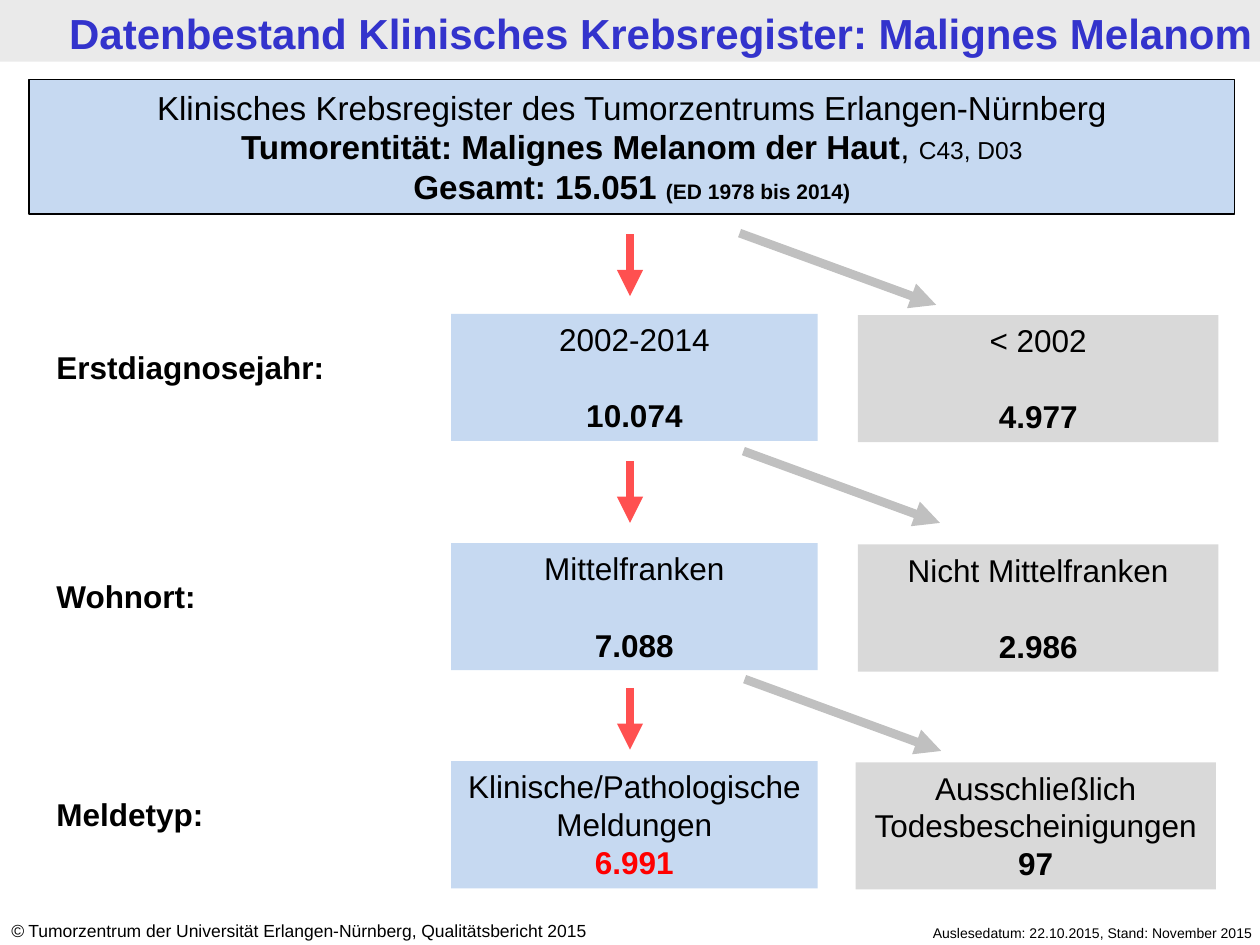
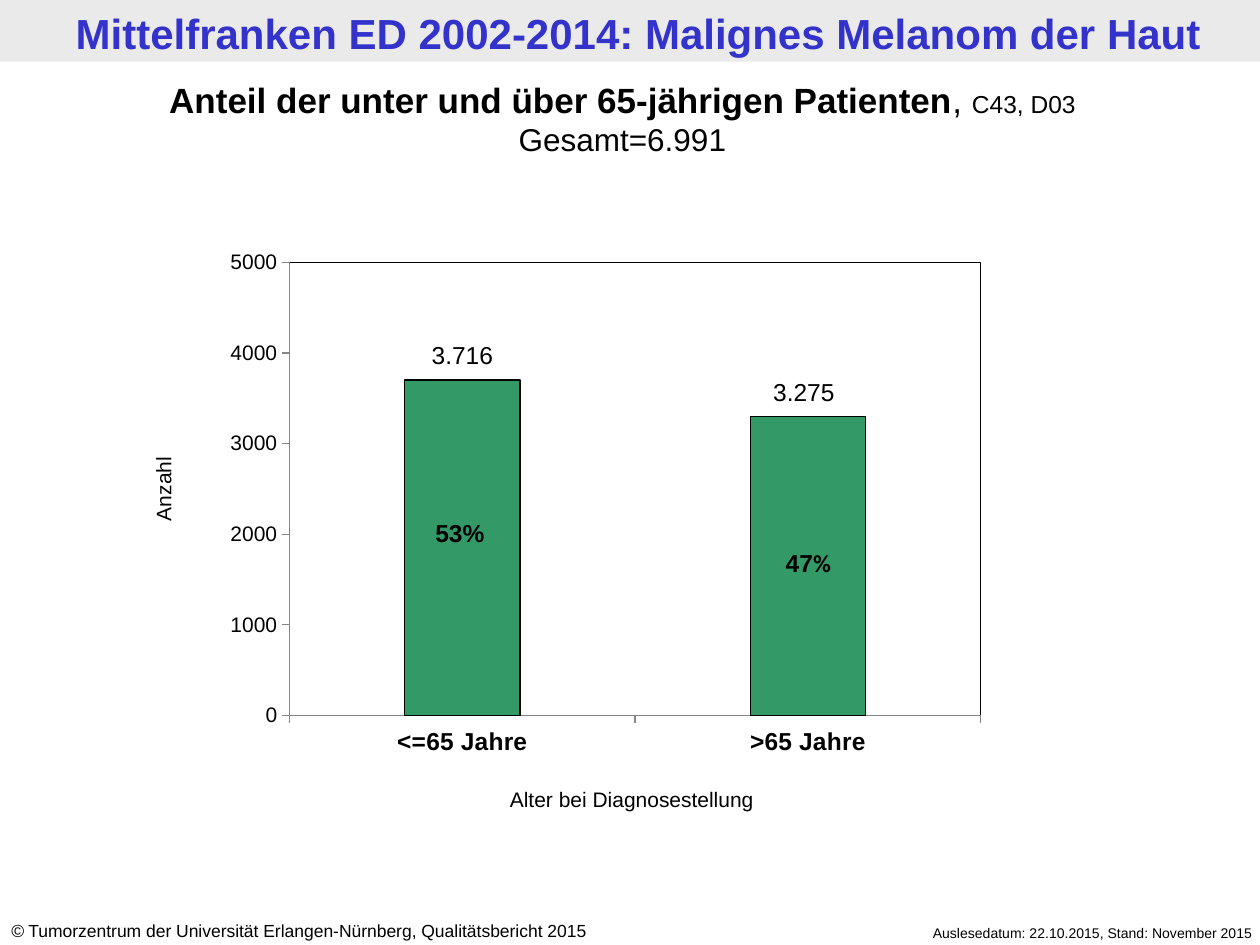
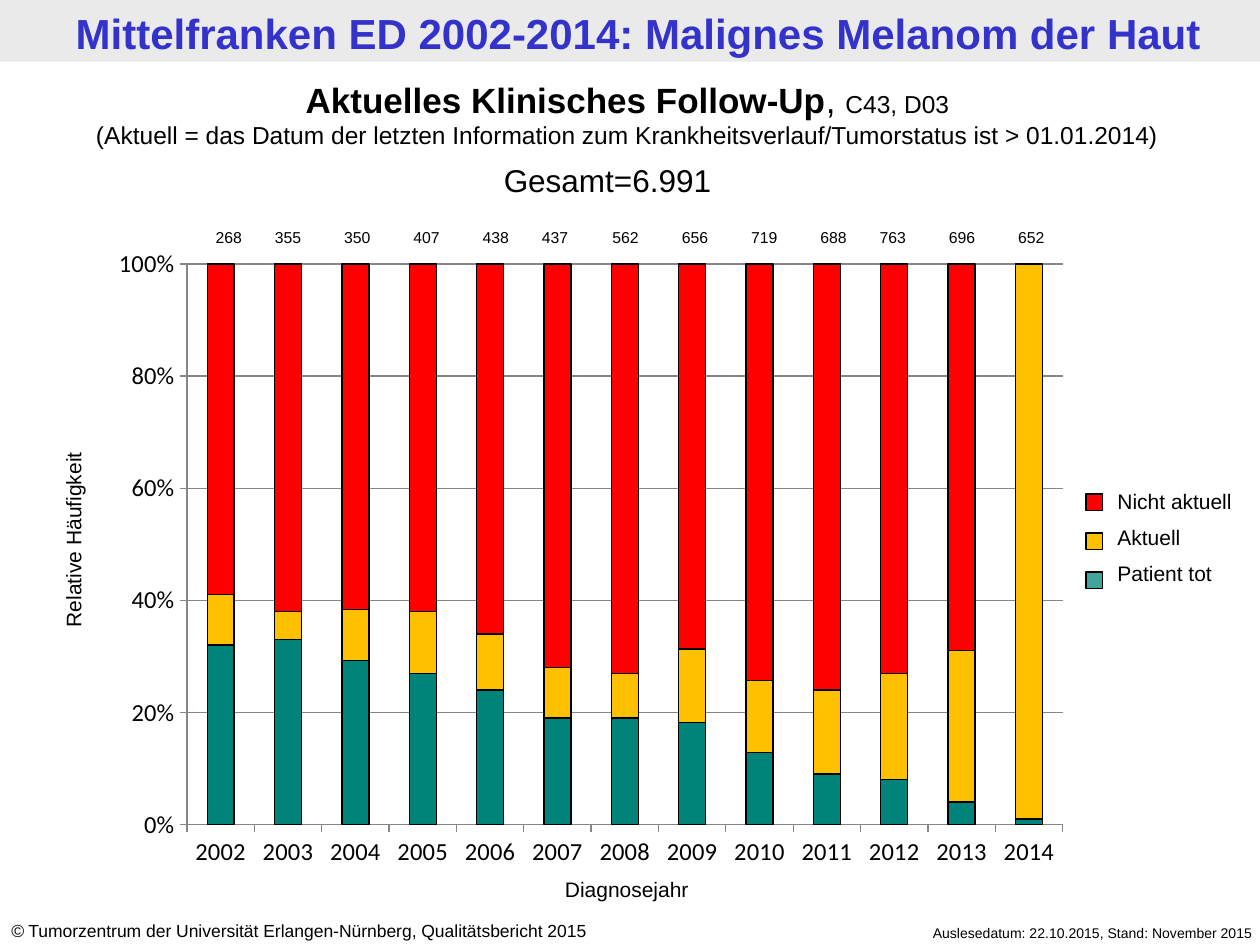
from lxml import etree
from pptx import Presentation
from pptx.chart.data import CategoryChartData
from pptx.dml.color import RGBColor
from pptx.enum.chart import XL_CHART_TYPE, XL_TICK_MARK
from pptx.enum.shapes import MSO_CONNECTOR, MSO_SHAPE
from pptx.enum.text import MSO_ANCHOR, MSO_AUTO_SIZE, PP_ALIGN
from pptx.oxml.ns import qn
from pptx.util import Inches, Pt

FONT = "Arial"
BLACK, RED, TITLE_BLUE = "000000", "FF0000", "3333CC"
BAND, BLUE_BOX, GREY_BOX = "EAEAEA", "C6D9F1", "D9D9D9"
ARROW_RED, ARROW_GREY = "FF5050", "C0C0C0"
GREEN, TEAL, AMBER, AXIS = "339966", "008378", "FFC000", "868686"
CENTER, LEFT, RIGHT = PP_ALIGN.CENTER, PP_ALIGN.LEFT, PP_ALIGN.RIGHT
MELANOMA_TITLE = "Mittelfranken ED 2002-2014: Malignes Melanom der Haut"
BOLD = {"bold": True}
PLAIN = {"bold": False}


def color(hex_value):
    return RGBColor.from_string(hex_value)


def place(shape, at):
    for name, value in zip(("left", "top", "width", "height"), at):
        setattr(shape, name, Inches(value))


def set_font(font, size, name=FONT, rgb=BLACK, **fmt):
    font.color.rgb = color(rgb)
    for key, value in {"size": Pt(size), "name": name, **fmt}.items():
        setattr(font, key, value)


def write(tf, paragraphs, size, align=LEFT, gap=0, **base):
    """Fill a frame; a paragraph is a string or a list of (text, format) runs."""
    tf.word_wrap = True
    tf.vertical_anchor = MSO_ANCHOR.TOP
    for i, runs in enumerate(paragraphs):
        p = tf.add_paragraph() if i else tf.paragraphs[0]
        p.alignment = align
        if i and gap:
            p.space_before = Pt(gap)
        for text, fmt in [(runs, {})] if isinstance(runs, str) else runs:
            r = p.add_run()
            r.text = text
            set_font(r.font, **{"size": size, **base, **fmt})


def add_text(s, at, paragraphs, size, rotation=0, **fmt):
    tb = s.shapes.add_textbox(*map(Inches, at))
    tb.rotation = rotation
    write(tb.text_frame, paragraphs, size, **fmt)


def add_box(s, at, fill, outline=False):
    sp = s.shapes.add_shape(MSO_SHAPE.RECTANGLE, *map(Inches, at))
    sp.shadow.inherit = False
    sp.fill.solid()
    sp.fill.fore_color.rgb = color(fill)
    if outline:
        sp.line.color.rgb = color(BLACK)
        sp.line.width = Pt(0.75)
    else:
        sp.line.fill.background()
    return sp


def add_arrow(s, start, end, rgb):
    c = s.shapes.add_connector(MSO_CONNECTOR.STRAIGHT, *map(Inches, start + end))
    c.line.color.rgb = color(rgb)
    c.line.width = Pt(5)
    sp_pr = c.element.find(qn("p:spPr"))
    etree.SubElement(sp_pr.find(qn("a:ln")), qn("a:tailEnd"), type="triangle")
    etree.SubElement(sp_pr, qn("a:effectLst"))


def add_slide(prs, title, indent=0.1):
    """Add a slide with the shared title band and footers."""
    s = prs.slides.add_slide(prs.slide_layouts[5])
    head = s.shapes.title
    head.element.addprevious(add_box(s, (0, 0, 10, 0.49), BAND).element)
    place(head, (0.06, 0.01, 10, 0.49))
    tf = head.text_frame
    tf.auto_size = MSO_AUTO_SIZE.NONE
    margins = {"left": indent, "right": 0.09, "top": 0.05, "bottom": 0.04}
    for side, value in margins.items():
        setattr(tf, f"margin_{side}", Inches(value))
    write(tf, [title], 24, align=CENTER, rgb=TITLE_BLUE, bold=True)
    add_text(s, (6.65, 7.29, 3.39, 0.24),
             ["Auslesedatum: 22.10.2015, Stand: November 2015"], 8, align=RIGHT)
    add_text(s, (-0.01, 7.25, 5.24, 0.27),
             [[("©", {"italic": True}),
               (" Tumorzentrum der Universität Erlangen-Nürnberg, "
                "Qualitätsbericht 2015", {})]], 10)
    return s


def set_plot_area(chart, x, y, w, h, frame=False):
    """Fix the inner plot area as fractions of the chart, optionally framed."""
    plot_area = chart.element.find(f".//{qn('c:plotArea')}")
    for old in plot_area.findall(qn("c:layout")):
        plot_area.remove(old)
    layout = etree.Element(qn("c:layout"))
    plot_area.insert(0, layout)
    manual = etree.SubElement(layout, qn("c:manualLayout"))
    values = {"layoutTarget": "inner", "xMode": "edge", "yMode": "edge",
              "x": x, "y": y, "w": w, "h": h}
    for tag, value in values.items():
        etree.SubElement(manual, qn(f"c:{tag}"), val=str(value))
    if frame:
        sp_pr = etree.SubElement(plot_area, qn("c:spPr"))
        ln = etree.SubElement(sp_pr, qn("a:ln"), w=str(Pt(0.75)))
        fill = etree.SubElement(ln, qn("a:solidFill"))
        etree.SubElement(fill, qn("a:srgbClr"), val=BLACK)


def add_columns(s, at, kind, cats, series, gap, maximum, step, number_format):
    """Add stacked columns; series holds (name, colour, values)."""
    data = CategoryChartData()
    data.categories = cats
    for name, _, values in series:
        data.add_series(name, values)
    chart = s.shapes.add_chart(kind, *map(Inches, at), data).chart
    chart.has_title = chart.has_legend = False
    set_font(chart.font, 18, name="Calibri")
    plot = chart.plots[0]
    plot.vary_by_categories = False
    plot.gap_width, plot.overlap = gap, 100
    for ser, (_, rgb, _) in zip(plot.series, series):
        ser.format.fill.solid()
        ser.format.fill.fore_color.rgb = color(rgb)
        ser.format.line.color.rgb = color(BLACK)
        ser.format.line.width = Pt(0.75)
    for axis in (chart.category_axis, chart.value_axis):
        axis.major_tick_mark = XL_TICK_MARK.OUTSIDE
        axis.minor_tick_mark = XL_TICK_MARK.NONE
        axis.format.line.color.rgb = color(AXIS)
        axis.has_major_gridlines = False
    axis = chart.value_axis
    axis.minimum_scale, axis.maximum_scale, axis.major_unit = 0, maximum, step
    axis.tick_labels.number_format = number_format
    axis.tick_labels.number_format_is_linked = False
    return chart


def build_selection(prs):
    s = add_slide(prs, "Datenbestand Klinisches Krebsregister: Malignes Melanom",
                  indent=0.46)
    register = add_box(s, (0.23, 0.63, 9.57, 1.07), BLUE_BOX, outline=True)
    register.text_frame.margin_top = Inches(0.06)
    write(register.text_frame, [
        "Klinisches Krebsregister des Tumorzentrums Erlangen-Nürnberg",
        [("Tumorentität: Malignes Melanom der Haut", BOLD), (", ", {}),
         ("C43, D03", {"size": 14})],
        [("Gesamt: 15.051 ", BOLD),
         ("(ED 1978 bis 2014)", {"size": 12, "bold": True})],
    ], 19, align=CENTER)

    # top, label offset, label, kept, excluded, excluded left, gap, count colour
    steps = [
        (2.49, 0.22, "Erstdiagnosejahr:", ("2002-2014", "10.074"),
         ("< 2002", "4.977"), 6.81, 22, BLACK),
        (4.31, 0.22, "Wohnort:", ("Mittelfranken", "7.088"),
         ("Nicht Mittelfranken", "2.986"), 6.81, 22, BLACK),
        (6.04, 0.22, "Meldetyp:", ("Klinische/Pathologische Meldungen", "6.991"),
         ("Ausschließlich Todesbescheinigungen", "97"), 6.79, 0, RED),
    ]
    for top, drop, label, kept, excluded, x, gap, count_rgb in steps:
        add_text(s, (0.35, top + drop, 2.76, 0.4), [label], 18, bold=True)
        for at, fill, (group, count), rgb in (
                ((3.58, top, 2.91, 1.01), BLUE_BOX, kept, count_rgb),
                ((x, top + 0.01, 2.86, 1.01), GREY_BOX, excluded, BLACK)):
            write(add_box(s, at, fill).text_frame,
                  [group, [(count, {"bold": True, "rgb": rgb})]],
                  18, align=CENTER, gap=gap)

    for red_y, grey_x, grey_y in ((1.86, 5.87, 1.85), (3.66, 5.9, 3.58),
                                  (5.46, 5.91, 5.39)):
        add_arrow(s, (5, red_y), (5, red_y + 0.49), ARROW_RED)
        add_arrow(s, (grey_x, grey_y), (grey_x + 1.56, grey_y + 0.57), ARROW_GREY)


def add_heading(s, at, heading, second_line, size):
    add_text(s, at, [[(heading, BOLD), (", ", PLAIN), ("C43, D03", {"size": 14})],
                     [(second_line, {"size": size})]], 20, align=CENTER)


def build_age_groups(prs):
    s = add_slide(prs, MELANOMA_TITLE)
    chart = add_columns(
        s, (1.51, 1.42, 6.98, 4.66), XL_CHART_TYPE.COLUMN_STACKED,
        ["<=65 Jahre", ">65 Jahre"], [("Anzahl", GREEN, (3700, 3300))],
        gap=200, maximum=5000, step=1000, number_format="General")
    set_font(chart.category_axis.tick_labels.font, 14, bold=True)
    set_font(chart.value_axis.tick_labels.font, 12)
    set_plot_area(chart, 0.113, 0.142, 0.786, 0.772, frame=True)
    add_heading(s, (0, 0.57, 9.88, 0.74),
                "Anteil der unter und über 65-jährigen Patienten",
                "Gesamt=6.991", 18)
    labels = [
        ((3.16, 4.06, 0.98, 0.34), [("53%", BOLD)], 14, 0),
        ((5.94, 4.3, 0.95, 0.34),
         [("47", BOLD), ("%", {"bold": True, "name": "Calibri"})], 14, 0),
        ((3.16, 2.65, 1.02, 0.34), "3.716", 14, 0),
        ((5.87, 2.94, 1.02, 0.34), "3.275", 14, 0),
        ((3.35, 6.19, 3.33, 0.3), "Alter bei Diagnosestellung", 12, 0),
        ((-0.01, 3.73, 2.61, 0.3), "Anzahl", 12, 270),
    ]
    for at, text, size, rotation in labels:
        add_text(s, at, [text], size, rotation, align=CENTER)


def build_follow_up(prs):
    s = add_slide(prs, MELANOMA_TITLE)
    series = [
        ("Patient tot", TEAL, (32, 33, 29, 27, 24, 19, 19, 18, 13, 9, 8, 4, 1)),
        ("Aktuell", AMBER, (9, 5, 9, 11, 10, 9, 8, 13, 13, 15, 19, 27, 99)),
        ("Nicht aktuell", RED,
         (59, 62, 61, 62, 66, 72, 73, 68, 75, 76, 73, 69, 0)),
    ]
    chart = add_columns(
        s, (0.79, 1.87, 7.8, 5.11), XL_CHART_TYPE.COLUMN_STACKED_100,
        [str(year) for year in range(2002, 2015)], series,
        gap=150, maximum=1, step=0.2, number_format="0%")
    for axis in (chart.category_axis, chart.value_axis):
        set_font(axis.tick_labels.font, 14, name="Calibri")
    chart.value_axis.has_major_gridlines = True
    chart.value_axis.major_gridlines.format.line.color.rgb = color(AXIS)
    set_plot_area(chart, 0.089, 0.044, 0.891, 0.871)

    add_text(s, (-0.62, 4.13, 2.41, 0.31), ["Relative Häufigkeit"], 12, 270,
             align=CENTER)
    add_text(s, (3.85, 6.91, 2.25, 0.31), ["Diagnosejahr"], 12, align=CENTER)
    add_heading(s, (-0.04, 0.57, 10.04, 0.67), "Aktuelles Klinisches Follow-Up",
                "(Aktuell = das Datum der letzten Information zum "
                "Krankheitsverlauf/Tumorstatus ist > 01.01.2014)", 14)
    add_text(s, (3.9, 1.23, 2.2, 0.4), ["Gesamt=6.991"], 18)

    totals = {1.54: 268, 2.01: 355, 2.56: 350, 3.11: 407, 3.66: 438, 4.13: 437,
              4.69: 562, 5.24: 656, 5.79: 719, 6.34: 688, 6.81: 763, 7.36: 696,
              7.91: 652}
    for x, total in totals.items():
        add_text(s, (x, 1.76, 0.55, 0.25), [str(total)], 9, align=CENTER)

    legend = series[::-1]
    add_text(s, (8.77, 3.83, 1.42, 0.91), [name for name, _, _ in legend], 12,
             gap=6)
    for i, (_, rgb, _) in enumerate(legend):
        key = add_box(s, (8.62, 3.92 + 0.31 * i, 0.13, 0.13), rgb, outline=True)
        if rgb == TEAL:
            fill = key.element.find(f".//{qn('a:solidFill')}/{qn('a:srgbClr')}")
            etree.SubElement(fill, qn("a:alpha"), val="74000")


def main():
    prs = Presentation()
    prs.slide_width, prs.slide_height = Inches(10), Inches(7.5)
    build_selection(prs)
    build_age_groups(prs)
    build_follow_up(prs)
    prs.save("out.pptx")


if __name__ == "__main__":
    main()
